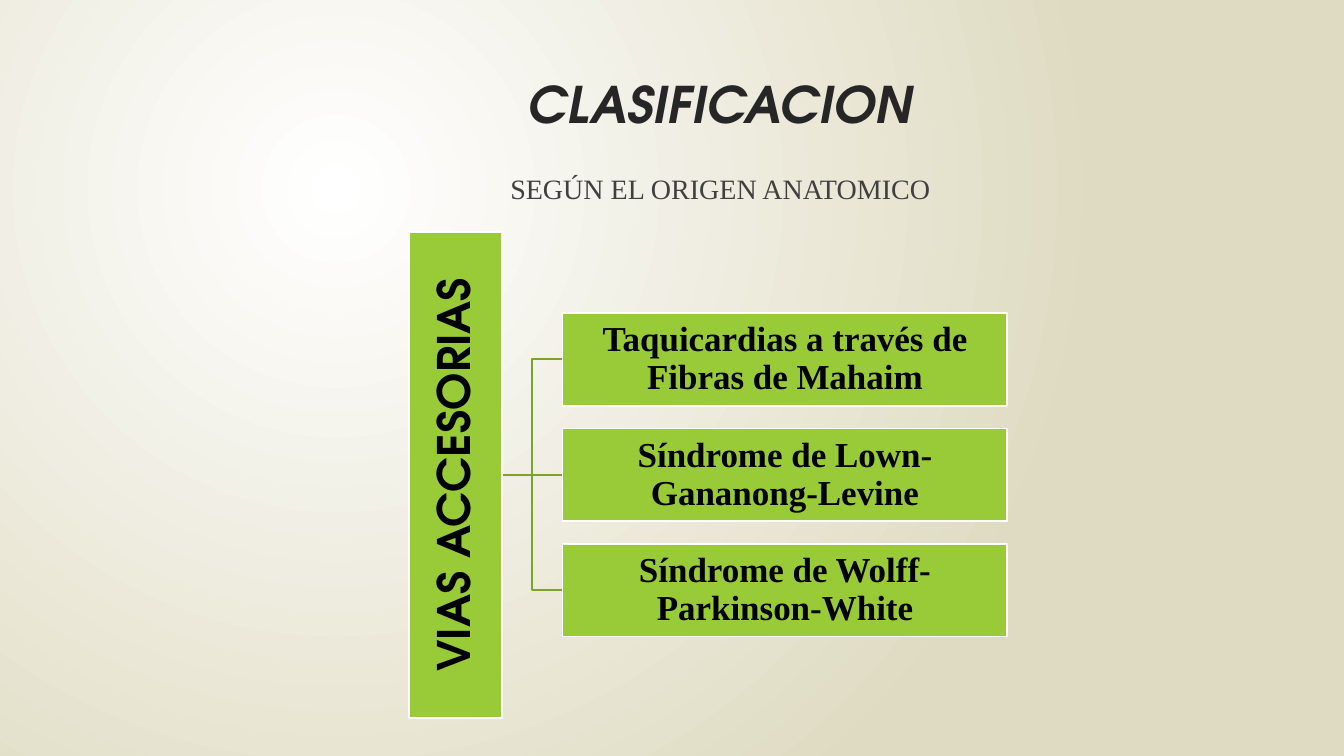
from lxml import etree
from pptx import Presentation
from pptx.dml.color import RGBColor
from pptx.enum import shapes, text
from pptx.oxml import ns
from pptx.util import Inches, Pt

WHITE = RGBColor(0xFF, 0xFF, 0xFF)
SAND = RGBColor(0xDF, 0xDB, 0xC2)
GREEN = RGBColor(0x99, 0xCB, 0x38)
OLIVE = RGBColor(0x7B, 0xA3, 0x2D)
BLACK = RGBColor(0, 0, 0)
DARK = RGBColor(0x26, 0x26, 0x26)
GREY = RGBColor(0x40, 0x40, 0x40)
SANS = "TeX Gyre Adventor"
SERIF = "Times New Roman"


def write(shape, words, size, face, color, bold=False, italic=False,
          anchor=text.MSO_ANCHOR.TOP, inset=None, spacing=1.0):
    frame = shape.text_frame
    frame.word_wrap = True
    frame.auto_size = text.MSO_AUTO_SIZE.NONE
    frame.vertical_anchor = anchor
    if inset is not None:
        frame.margin_left = frame.margin_right = Inches(inset)
        frame.margin_top = frame.margin_bottom = Inches(inset)
    para = frame.paragraphs[0]
    para.alignment = text.PP_ALIGN.CENTER
    para.line_spacing = spacing
    para.space_before = Pt(0)
    run = para.add_run()
    run.text = words
    font = run.font
    font.size, font.name = Pt(size), face
    font.bold, font.italic = bold, italic
    font.color.rgb = color


def add_box(left, top, width, height, words, size, face):
    box = slide.shapes.add_shape(
        shapes.MSO_SHAPE.RECTANGLE,
        Inches(left), Inches(top), Inches(width), Inches(height))
    box.shadow.inherit = False
    box.fill.solid()
    box.fill.fore_color.rgb = GREEN
    box.line.color.rgb = WHITE
    box.line.width = Pt(1.25)
    write(box, words, size, face, BLACK, bold=True,
          anchor=text.MSO_ANCHOR.MIDDLE, inset=0.02, spacing=0.9)
    return box


deck = Presentation()
deck.slide_width, deck.slide_height = Inches(13.33), Inches(7.5)
slide = deck.slides.add_slide(deck.slide_layouts[1])

# Radial background
fill = slide.background.fill
fill.gradient()
for stop, color, place in zip(fill.gradient_stops, (WHITE, SAND), (0, 1)):
    stop.color.rgb = color
    stop.position = place
grad = slide.element.find(".//" + ns.qn("a:gradFill"))
grad.remove(grad.find(ns.qn("a:lin")))
radial = etree.SubElement(grad, ns.qn("a:path"), path="circle")
etree.SubElement(radial, ns.qn("a:fillToRect"),
                 l="50000", t="50000", r="100000", b="100000")

# Title and subtitle
title, body = slide.placeholders
for holder, top, height in ((title, 0.68, 1.4), (body, 1.65, 4.82)):
    holder.left, holder.top = Inches(1.71), Inches(top)
    holder.width, holder.height = Inches(10.87), Inches(height)
props = body.text_frame.paragraphs[0]._p.get_or_add_pPr()
props.set("marL", "0")
props.set("indent", "0")
etree.SubElement(props, ns.qn("a:buNone"))
write(title, "CLASIFICACION", 36, SANS, DARK, bold=True, italic=True)
write(body, "SEGÚN EL ORIGEN ANATOMICO", 20, SERIF, GREY)

# Tree: one root and three branches
LONG, THICK = 4.82, 0.92
ROOT, LEAF, MID, STEP = 4.98, 5.58, 4.71, 1.145
branches = [
    (-1, "Taquicardias a través de Fibras de Mahaim"),
    (0, "Síndrome de Lown-Gananong-Levine"),
    (1, "Síndrome de Wolff-Parkinson-White"),
]
for row, words in branches:
    kind = shapes.MSO_CONNECTOR.ELBOW if row else shapes.MSO_CONNECTOR.STRAIGHT
    link = slide.shapes.add_connector(
        kind, Inches(ROOT), Inches(MID), Inches(LEAF), Inches(MID + row * STEP))
    link.line.color.rgb = OLIVE
    link.line.width = Pt(1.25)
    etree.SubElement(link._element.spPr, ns.qn("a:effectLst"))

root = add_box(ROOT - (LONG + THICK) / 2, MID - THICK / 2, LONG, THICK,
               "VIAS ACCESORIAS", 32, SANS)
root.rotation = 270
for row, words in branches:
    add_box(LEAF, MID + row * STEP - THICK / 2, 4.41, THICK, words, 25, SERIF)

deck.save("out.pptx")
